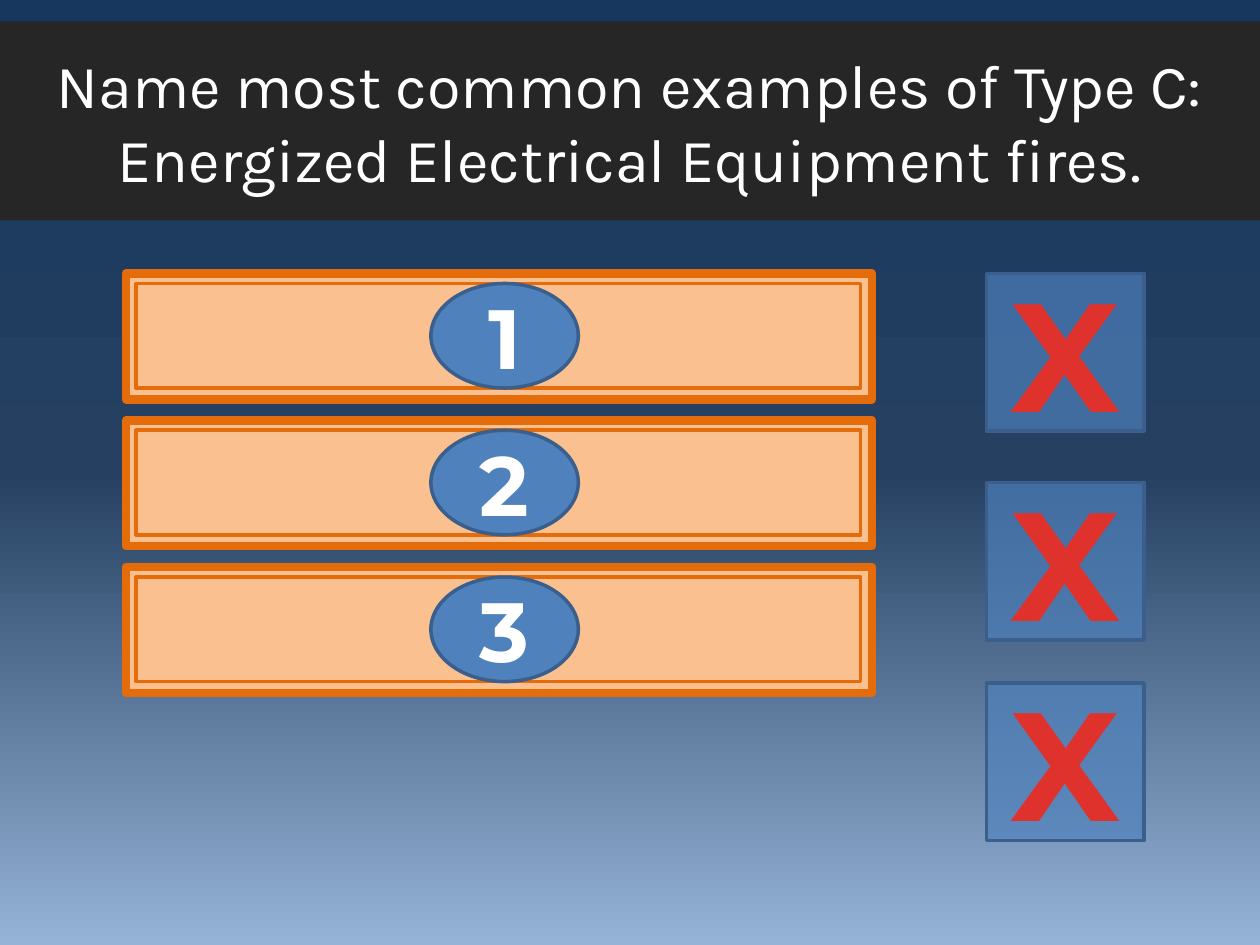
"""Build a quiz board slide with three numbered answer panels and three strike marks."""
from copy import deepcopy

from pptx import Presentation
from pptx.dml.color import RGBColor
from pptx.enum.shapes import MSO_SHAPE as SHAPE
from pptx.enum.text import MSO_ANCHOR as ANCHOR, MSO_AUTO_SIZE as AUTO_SIZE, PP_ALIGN as ALIGN
from pptx.oxml.ns import qn
from pptx.util import Inches, Pt
from lxml.etree import SubElement

COLORS = {
    "sky_top": "17375E", "sky_middle": "254061", "sky_bottom": "95B3D7",
    "banner": "262626", "panel": "FAC090", "panel_edge": "E46C0A",
    "blue": "4F81BD", "blue_edge": "3A5F8C", "white": "FFFFFF",
    "strike_top": "E0322D", "strike_bottom": "A2201C",
}


def rgb(name):
    return RGBColor.from_string(COLORS[name])


def write(shape, text, size, font, color="white", bold=False, wrap=True,
          anchor=ANCHOR.MIDDLE, fit=AUTO_SIZE.NONE):
    frame = shape.text_frame
    frame.word_wrap, frame.vertical_anchor, frame.auto_size = wrap, anchor, fit
    paragraph = frame.paragraphs[0]
    paragraph.alignment = ALIGN.CENTER
    run = paragraph.add_run()
    run.text = text
    run.font.size, run.font.name, run.font.bold = Pt(size), font, bold
    run.font.color.rgb = rgb(color)
    return run


prs = Presentation()
prs.slide_width, prs.slide_height = Inches(10), Inches(7.5)
slide = prs.slides.add_slide(prs.slide_layouts[5])
shapes = slide.shapes

sky = shapes.add_shape(SHAPE.RECTANGLE, 0, 0, prs.slide_width, prs.slide_height)
sky.shadow.inherit = False
sky.line.fill.background()
sky.fill.gradient()
sky.fill.gradient_angle = 270
first_stop = sky.fill.gradient_stops[0]._gs
first_stop.addnext(deepcopy(first_stop))
for stop, position, color in zip(sky.fill.gradient_stops, (0, 0.5, 1),
                                 ("sky_top", "sky_middle", "sky_bottom")):
    stop.position = position
    stop.color.rgb = rgb(color)

title = shapes.title
title.left, title.top = Inches(0), Inches(0.17)
title.width, title.height = Inches(10), Inches(1.58)
title.fill.solid()
title.fill.fore_color.rgb = rgb("banner")
write(title, "Name most common examples of Type C: Energized Electrical Equipment fires.",
      size=35, font="Karla")
sky._element.addnext(title._element)

for row in range(3):
    top = 2.17 + row * 1.165
    answer = shapes.add_group_shape()
    for kind, left, inset, width, height, fill, edge, weight in (
        (SHAPE.RECTANGLE, 1, 0, 5.92, 1, "panel", "panel_edge", 5),
        (SHAPE.RECTANGLE, 1.08, 0.08, 5.75, 0.83, "panel", "panel_edge", 2),
        (SHAPE.OVAL, 3.42, 0.08, 1.17, 0.83, "blue", "blue_edge", 2),
    ):
        part = answer.shapes.add_shape(kind, Inches(left), Inches(top + inset),
                                       Inches(width), Inches(height))
        part.shadow.inherit = False
        part.fill.solid()
        part.fill.fore_color.rgb = rgb(fill)
        part.line.color.rgb = rgb(edge)
        part.line.width = Pt(weight)
    write(part, str(row + 1), size=48, font="Montserrat", bold=True)

for top in (2.17, 3.83, 5.42):
    tile = shapes.add_shape(SHAPE.RECTANGLE, Inches(7.83), Inches(top),
                            Inches(1.25), Inches(1.25))
    tile.shadow.inherit = False
    tile.fill.solid()
    tile.fill.fore_color.rgb = rgb("blue")
    tile_color = tile.fill._xPr.find(qn("a:solidFill"))[0]
    SubElement(tile_color, qn("a:alpha"), val="69000")
    tile.line.color.rgb = rgb("blue_edge")
    tile.line.width = Pt(2)

    strike = shapes.add_textbox(Inches(7.92), Inches(top - 0.17), Inches(1.06), Inches(1.58))
    mark = write(strike, "X", size=88, font="Montserrat", color="strike_top", bold=True,
                 wrap=False, anchor=ANCHOR.TOP, fit=AUTO_SIZE.SHAPE_TO_FIT_TEXT)
    mark.font._element.set("spc", "50")
    mark.font.fill.gradient()
    mark.font.fill.gradient_angle = 270
    for stop, position, color in zip(mark.font.fill.gradient_stops, (0.25, 1),
                                     ("strike_top", "strike_bottom")):
        stop.position = position
        stop.color.rgb = rgb(color)

prs.save("out.pptx")
